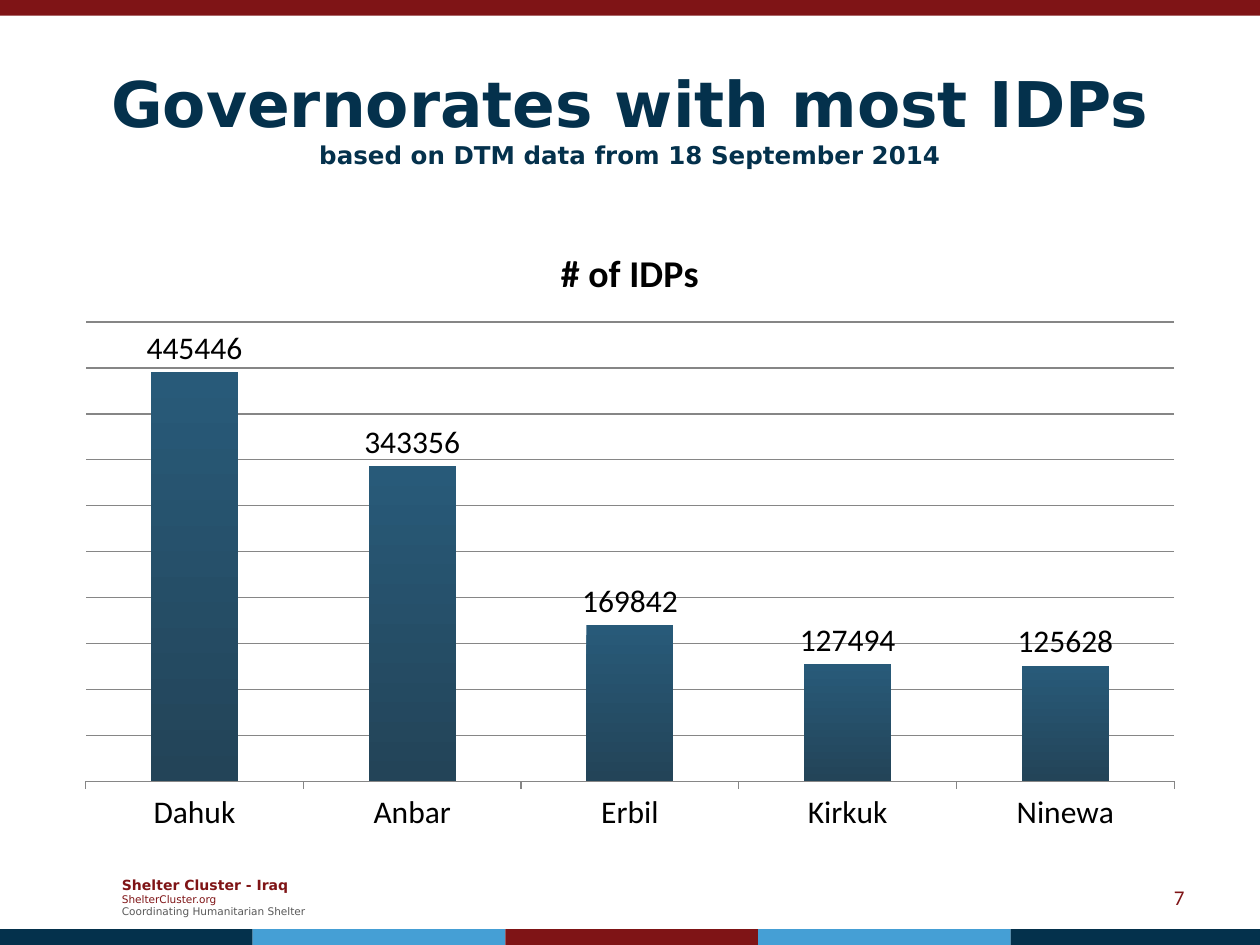
from pptx import Presentation
from pptx.chart.data import CategoryChartData
from pptx.dml.color import RGBColor
from pptx.enum import chart as chart_enum, shapes, text
from pptx.util import Pt

RED, NAVY, BLUE, GREY = "7F1416", "04314C", "459FD5", "595959"
GOVERNORATES = {
    "Dahuk": 445446,
    "Anbar": 343356,
    "Erbil": 169842,
    "Kirkuk": 127494,
    "Ninewa": 125628,
}


def color(value):
    return RGBColor.from_string(value)


class SlideBuilder:
    heading_font = "DejaVu Sans"
    body_font = "Calibri"
    grid_color = "868686"
    bar_gradient = ("285A79", "234458")

    def __init__(self, slide):
        self.slide = slide

    def style(self, font, name, size, hue, bold=False):
        font.name = name
        font.size = Pt(size)
        font.bold = bold
        font.color.rgb = color(hue)

    def band(self, left, top, width, height, hue):
        shape = self.slide.shapes.add_shape(
            shapes.MSO_SHAPE.RECTANGLE, Pt(left), Pt(top), Pt(width), Pt(height))
        shape.shadow.inherit = False
        shape.fill.solid()
        shape.fill.fore_color.rgb = color(hue)
        shape.line.fill.background()

    def title(self, left, top, width, height, heading, subheading):
        shape = self.slide.shapes.title
        shape.left, shape.top = Pt(left), Pt(top)
        shape.width, shape.height = Pt(width), Pt(height)
        frame = shape.text_frame
        frame.text = f"{heading}\v{subheading}"
        frame.vertical_anchor = text.MSO_ANCHOR.MIDDLE
        paragraph = frame.paragraphs[0]
        paragraph.alignment = text.PP_ALIGN.CENTER
        for run, size in zip(paragraph.runs, (36, 14)):
            self.style(run.font, self.heading_font, size, NAVY, True)

    def textbox(self, left, top, width, height, lines, font_name,
                alignment=text.PP_ALIGN.LEFT):
        shape = self.slide.shapes.add_textbox(
            Pt(left), Pt(top), Pt(width), Pt(height))
        frame = shape.text_frame
        frame.word_wrap = True
        frame.vertical_anchor = text.MSO_ANCHOR.MIDDLE
        frame.text = "\n".join(line[0] for line in lines)
        for paragraph, (_, size, hue, bold) in zip(frame.paragraphs, lines):
            paragraph.alignment = alignment
            self.style(paragraph.runs[0].font, font_name, size, hue, bold)

    def column_chart(self, left, top, width, height, name, values):
        data = CategoryChartData()
        data.categories = list(values)
        data.add_series(name, list(values.values()))
        chart = self.slide.shapes.add_chart(
            chart_enum.XL_CHART_TYPE.COLUMN_CLUSTERED,
            Pt(left), Pt(top), Pt(width), Pt(height), data).chart
        self.style(chart.font, self.body_font, 18, "000000")
        chart.has_legend = False
        chart.has_title = True
        chart.chart_title.text_frame.text = name
        title_run = chart.chart_title.text_frame.paragraphs[0].runs[0]
        self.style(title_run.font, self.body_font, 21.6, "000000", True)

        value_axis = chart.value_axis
        value_axis.visible = False
        value_axis.minimum_scale = 0
        value_axis.maximum_scale = 500000
        value_axis.major_unit = 50000
        value_axis.has_major_gridlines = True
        category_axis = chart.category_axis
        category_axis.major_tick_mark = chart_enum.XL_TICK_MARK.OUTSIDE
        for line in (value_axis.major_gridlines.format.line,
                     category_axis.format.line):
            line.width = Pt(0.75)
            line.color.rgb = color(self.grid_color)

        plot = chart.plots[0]
        plot.vary_by_categories = False
        plot.gap_width = 150
        plot.has_data_labels = True
        plot.data_labels.show_value = True
        plot.data_labels.position = chart_enum.XL_LABEL_POSITION.OUTSIDE_END
        fill = plot.series[0].format.fill
        fill.gradient()
        fill.gradient_angle = 270
        for stop, hue in zip(fill.gradient_stops, self.bar_gradient):
            stop.color.rgb = color(hue)


def main():
    presentation = Presentation()
    presentation.slide_width, presentation.slide_height = Pt(720), Pt(540)
    slide = presentation.slides.add_slide(presentation.slide_layouts[5])
    builder = SlideBuilder(slide)

    builder.textbox(62.6, 496.8, 124.6, 31.7, [
        ("Shelter Cluster - Iraq", 8, RED, True),
        ("ShelterCluster.org", 6, RED, False),
        ("Coordinating Humanitarian Shelter", 6, GREY, False),
    ], builder.heading_font)
    builder.band(0, 0, 720, 9, RED)
    band_width = 144.4
    for index, hue in enumerate((NAVY, BLUE, RED, BLUE, NAVY)):
        builder.band(index * band_width, 531, band_width, 9, hue)
    builder.title(36, 21.6, 648, 90, "Governorates with most IDPs",
                  "based on DTM data from 18 September 2014")
    builder.column_chart(36, 126, 648, 356.4, "# of IDPs", GOVERNORATES)
    builder.textbox(516, 498.2, 168, 28.8, [("7", 12, RED, False)],
                    builder.body_font, text.PP_ALIGN.RIGHT)

    presentation.save("out.pptx")


if __name__ == "__main__":
    main()
